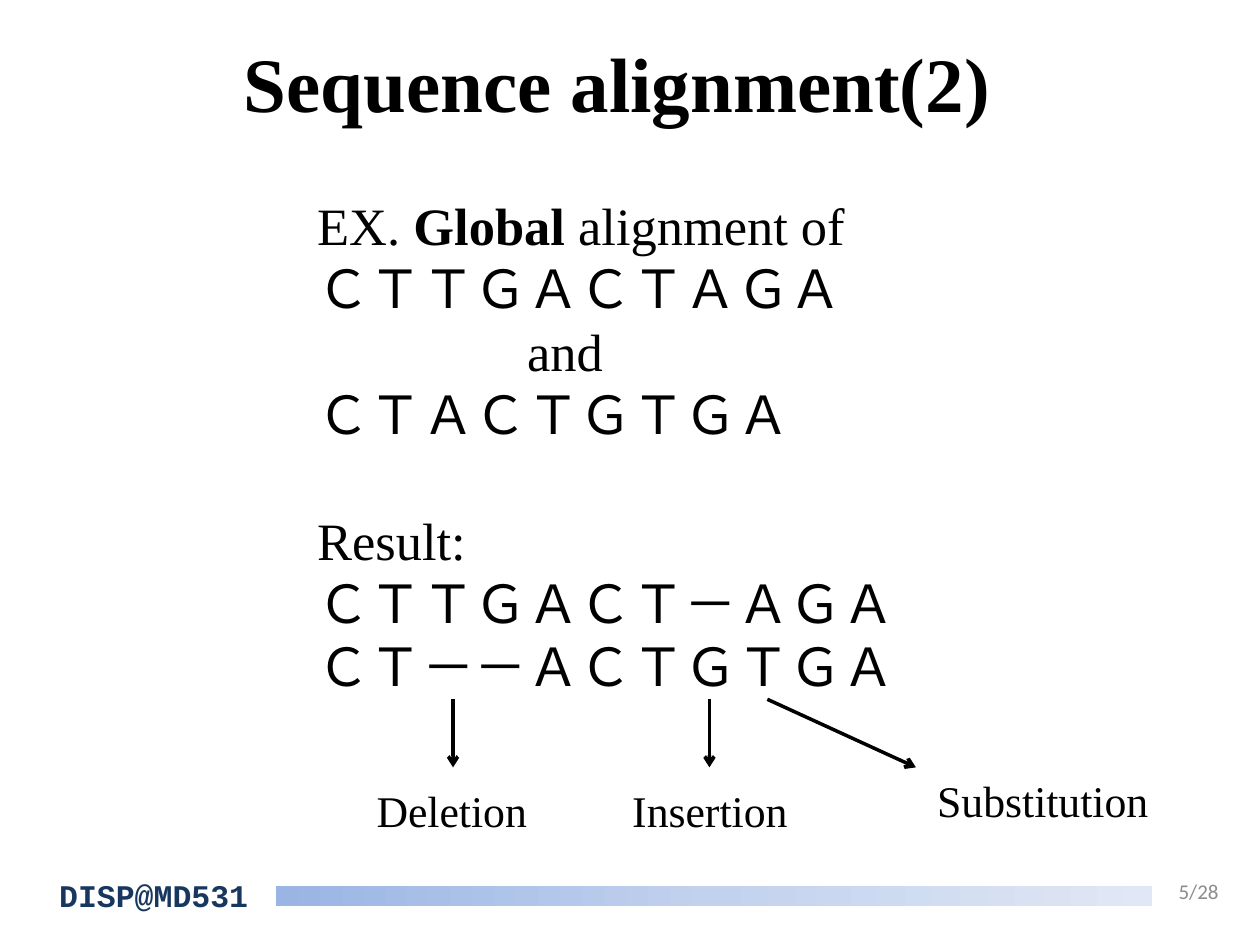
from copy import deepcopy
from pptx import Presentation
from pptx.dml.color import RGBColor
from pptx.enum.shapes import MSO_CONNECTOR, MSO_SHAPE
from pptx.enum.text import MSO_ANCHOR, PP_ALIGN
from pptx.oxml.ns import qn
from pptx.util import Pt
from lxml import etree

LINE = MSO_CONNECTOR.STRAIGHT
RECT = MSO_SHAPE.RECTANGLE
TOP, MID = MSO_ANCHOR.TOP, MSO_ANCHOR.MIDDLE
LEFT, CENTER, RIGHT = PP_ALIGN.LEFT, PP_ALIGN.CENTER, PP_ALIGN.RIGHT
HUES = {"ink": "000000", "navy": "17375E", "gray": "8C8C8C",
        "start": "9AB5E4", "mid": "C2D1ED", "end": "E1E8F5"}
SERIF = "Times New Roman"
PAD = (7.2, 3.6, 7.2, 3.6)


def hue(name):
    return RGBColor.from_string(HUES[name])


class Deck:
    def __init__(self, wide, high):
        self.prs = Presentation()
        self.prs.slide_width, self.prs.slide_height = Pt(wide), Pt(high)
        self.slide = self.prs.slides.add_slide(self.prs.slide_layouts[6])

    def text(self, box, paras, size, font=SERIF, color="ink", bold=False,
             align=LEFT, anchor=TOP, pad=PAD, wrap=True):
        shape = self.slide.shapes.add_textbox(*map(Pt, box))
        frame = shape.text_frame
        frame.word_wrap = wrap
        frame.vertical_anchor = anchor
        (frame.margin_left, frame.margin_top,
         frame.margin_right, frame.margin_bottom) = map(Pt, pad)
        for i, (runs, indent, gap) in enumerate(paras):
            para = frame.add_paragraph() if i else frame.paragraphs[0]
            para.alignment = align
            if gap:
                para.space_before = Pt(gap)
            if indent:
                para._p.get_or_add_pPr().set("marL", str(Pt(indent)))
            for words, heavy in runs:
                run = para.add_run()
                run.text = words
                run.font.name, run.font.size = font, Pt(size)
                run.font.bold = bold or heavy
                run.font.color.rgb = hue(color)

    def arrow(self, x1, y1, x2, y2):
        link = self.slide.shapes.add_connector(LINE, *map(Pt, (x1, y1, x2, y2)))
        link.line.width = Pt(2)
        link.line.color.rgb = hue("ink")
        ln = link.line._get_or_add_ln()
        etree.SubElement(ln, qn("a:tailEnd"), type="arrow")
        etree.SubElement(link._element.spPr, qn("a:effectLst"))

    def bar(self, box, names):
        shape = self.slide.shapes.add_shape(RECT, *map(Pt, box))
        shape.shadow.inherit = False
        shape.line.fill.background()
        fill = shape.fill
        fill.gradient()
        fill.gradient_angle = 0
        stops = shape._element.spPr.find(qn("a:gradFill")).find(qn("a:gsLst"))
        stops.append(deepcopy(stops[0]))
        for i, (stop, name) in enumerate(zip(fill.gradient_stops, names)):
            stop.position = i / (len(names) - 1)
            stop.color.rgb = hue(name)


def plain(words, indent=0, gap=0):
    return [(words, False)], indent, gap


def main():
    deck = Deck(720, 540)
    deck.text((36, 16.5, 644.5, 160), [plain("Sequence alignment(2)")], 44,
              bold=True, align=CENTER, pad=(0, 4, 11, 0))
    deck.bar((157.7, 506.2, 500.4, 11.5), ("start", "mid", "end"))
    deck.text((33.8, 500.4, 118, 22.3), [plain("DISP@MD531")], 18,
              "Courier New", "navy", bold=True, pad=(0, 0, 0, 0))
    head = [("EX. ", False), ("Global", True), (" alignment of", False)], 0, 0
    deck.text((174.2, 106.6, 438.5, 298), [
        head,
        plain("ＣＴＴＧＡＣＴＡＧＡ"),
        plain("and", indent=120),
        plain("ＣＴＡＣＴＧＴＧＡ"),
        plain("Result:", gap=36),
        plain("ＣＴＴＧＡＣＴ－ＡＧＡ"),
        plain("ＣＴ－－ＡＣＴＧＴＧＡ"),
    ], 30)
    edits = [("Deletion", 208.1, 444.2, 101.5, 258.9, 258.9),
             ("Insertion", 354.2, 444.2, 104.4, 405.4, 405.4),
             ("Substitution", 528.5, 438.5, 136.8, 438.5, 523.4)]
    for word, left, top, wide, x1, x2 in edits:
        deck.arrow(x1, 399.6, x2, 438.5)
        deck.text((left, top, wide, 37.4), [plain(word)], 25, wrap=False)
    deck.text((663.8, 495.4, 39.6, 28), [plain("5/28")], 12, "Calibri", "gray",
              align=RIGHT, anchor=MID)
    deck.prs.save("out.pptx")


if __name__ == "__main__":
    main()
